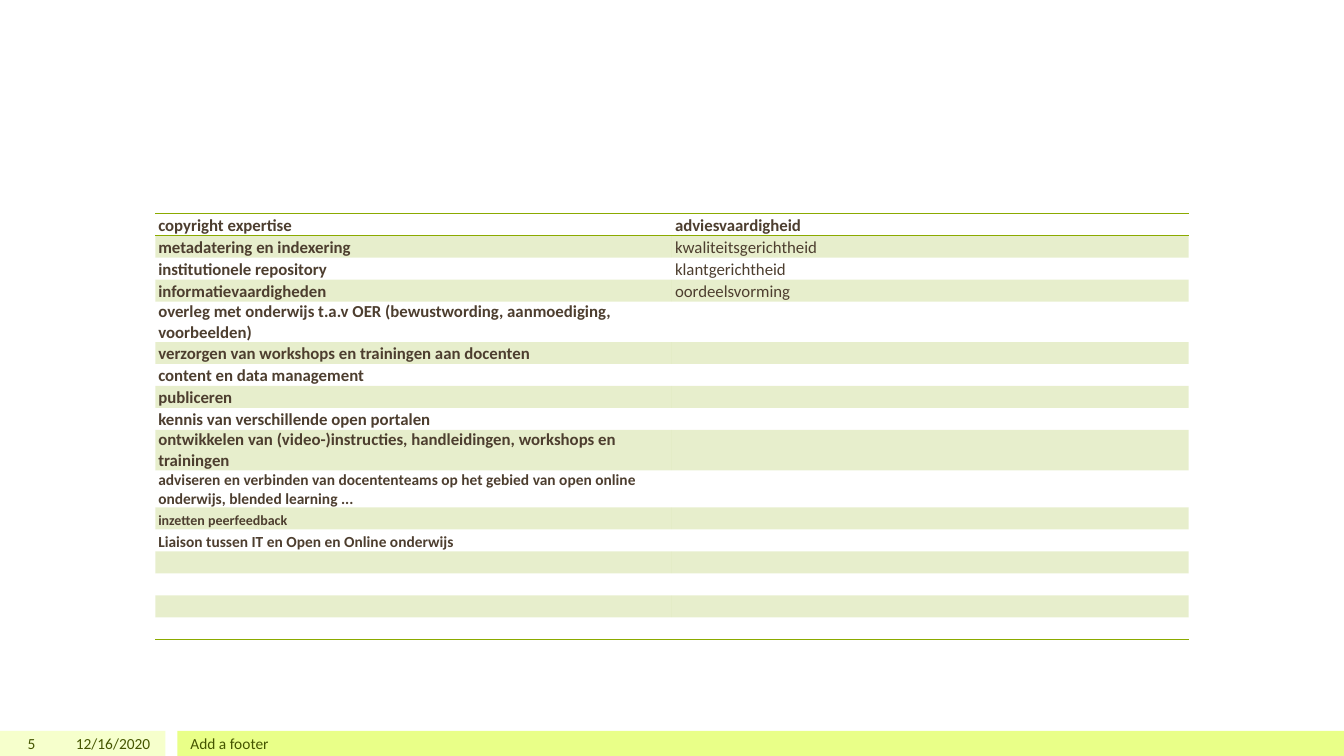
from dataclasses import dataclass

from lxml import etree
from pptx import Presentation
from pptx.dml.color import RGBColor
from pptx.enum.shapes import MSO_SHAPE
from pptx.enum.text import MSO_ANCHOR, PP_ALIGN
from pptx.oxml.ns import qn
from pptx.util import Inches, Pt

RECTANGLE = MSO_SHAPE.RECTANGLE
MIDDLE, BOTTOM = MSO_ANCHOR.MIDDLE, MSO_ANCHOR.BOTTOM
LEFT, RIGHT = PP_ALIGN.LEFT, PP_ALIGN.RIGHT

FONT = "Calibri"
GREEN, BROWN, FOOTER_TEXT = "8BAA00", "4D3E2F", "455500"
PLAIN_TABLE_STYLE = "{2D5ABB26-0587-4C30-8999-92F81FD0307C}"
FOOTER_TOP, FOOTER_HEIGHT = 7.25, 0.25


@dataclass
class FooterBar:
    left: float
    width: float
    color: str


@dataclass
class FooterText:
    text: str
    left: float
    width: float
    alignment: PP_ALIGN


@dataclass
class SkillRow:
    skill: str = ""
    competence: str = ""
    size: int = 12


FOOTER_BARS = [FooterBar(0, 1.64, "F6FFCC"), FooterBar(1.76, 11.57, "E9FF88")]
FOOTER_TEXTS = [
    FooterText("5", 0, 0.45, RIGHT),
    FooterText("12/16/2020", 0.5, 1.09, RIGHT),
    FooterText("Add a footer", 1.79, 10, LEFT),
]
SKILL_ROWS = [
    SkillRow("copyright expertise", "adviesvaardigheid"),
    SkillRow("metadatering en indexering", "kwaliteitsgerichtheid"),
    SkillRow("institutionele repository", "klantgerichtheid"),
    SkillRow("informatievaardigheden", "oordeelsvorming"),
    SkillRow("overleg met onderwijs t.a.v OER (bewustwording, aanmoediging, voorbeelden)"),
    SkillRow("verzorgen van workshops en trainingen aan docenten"),
    SkillRow("content en data management"),
    SkillRow("publiceren"),
    SkillRow("kennis van verschillende open portalen"),
    SkillRow("ontwikkelen van (video-)instructies, handleidingen, workshops en trainingen"),
    SkillRow("adviseren en verbinden van docententeams op het gebied van "
             "open online onderwijs, blended learning ...", size=11),
    SkillRow("inzetten peerfeedback", size=10),
    SkillRow("Liaison tussen IT en Open en Online onderwijs", size=11),
] + [SkillRow() for _ in range(4)]


def rgb(color: str) -> RGBColor:
    return RGBColor.from_string(color)


def add_span(para, text: str, size: int, color: str, bold: bool = False) -> None:
    span = para.add_run()
    span.text = text
    span.font.name = FONT
    span.font.size = Pt(size)
    span.font.bold = bold
    span.font.color.rgb = rgb(color)


def add_footer_bar(page, bar: FooterBar) -> None:
    shape = page.shapes.add_shape(RECTANGLE, Inches(bar.left), Inches(FOOTER_TOP),
                                  Inches(bar.width), Inches(FOOTER_HEIGHT))
    shape.shadow.inherit = False
    shape.fill.solid()
    shape.fill.fore_color.rgb = rgb(bar.color)
    shape.line.fill.background()


def add_footer_text(page, item: FooterText) -> None:
    box = page.shapes.add_textbox(Inches(item.left), Inches(FOOTER_TOP),
                                  Inches(item.width), Inches(FOOTER_HEIGHT))
    frame = box.text_frame
    frame.word_wrap = True
    frame.vertical_anchor = MIDDLE
    frame.margin_top = frame.margin_bottom = 0
    para = frame.paragraphs[0]
    para.alignment = item.alignment
    add_span(para, item.text, 11, FOOTER_TEXT)


def fill_cell(cell, banded: bool) -> None:
    if not banded:
        cell.fill.background()
        return
    cell.fill.solid()
    cell.fill.fore_color.rgb = rgb(GREEN)
    color = cell._tc.tcPr.find(".//" + qn("a:srgbClr"))
    etree.SubElement(color, qn("a:alpha"), val="20000")


def add_border(cell, side: str) -> None:
    line = etree.Element(qn(f"a:ln{side}"), w=str(Pt(1)))
    solid = etree.SubElement(line, qn("a:solidFill"))
    etree.SubElement(solid, qn("a:srgbClr"), val=GREEN)
    cell._tc.tcPr.insert(0, line)


def write_cell(cell, text: str, size: int, bold: bool) -> None:
    cell.vertical_anchor = BOTTOM
    cell.margin_left = cell.margin_right = Inches(0.03)
    cell.margin_top = cell.margin_bottom = 0
    para = cell.text_frame.paragraphs[0]
    if text:
        add_span(para, text, size, BROWN, bold)
    else:
        # Keeps an empty row as low as the others
        etree.SubElement(para._p, qn("a:endParaRPr"), sz=str(size * 100))


def add_skill_table(page, rows: list[SkillRow]) -> None:
    table = page.shapes.add_table(len(rows), 2, Inches(1.54), Inches(2.12),
                                  Inches(10.25), Inches(3.71)).table
    table.first_row = table.horz_banding = False
    table._tbl.tblPr.find(qn("a:tableStyleId")).text = PLAIN_TABLE_STYLE
    last = len(rows) - 1
    for index, row in enumerate(rows):
        for column, text in enumerate((row.skill, row.competence)):
            cell = table.cell(index, column)
            write_cell(cell, text, row.size, bold=index == 0 or column == 0)
            fill_cell(cell, banded=index % 2 == 1)
            if index in (0, last):
                add_border(cell, "B")
            if index == 0:
                add_border(cell, "T")


def main() -> None:
    deck = Presentation()
    deck.slide_width, deck.slide_height = Inches(13.33), Inches(7.5)
    page = deck.slides.add_slide(deck.slide_layouts[6])

    # Footer
    for bar in FOOTER_BARS:
        add_footer_bar(page, bar)
    for item in FOOTER_TEXTS:
        add_footer_text(page, item)

    # Skills and competences
    add_skill_table(page, SKILL_ROWS)
    deck.save("out.pptx")


if __name__ == "__main__":
    main()
